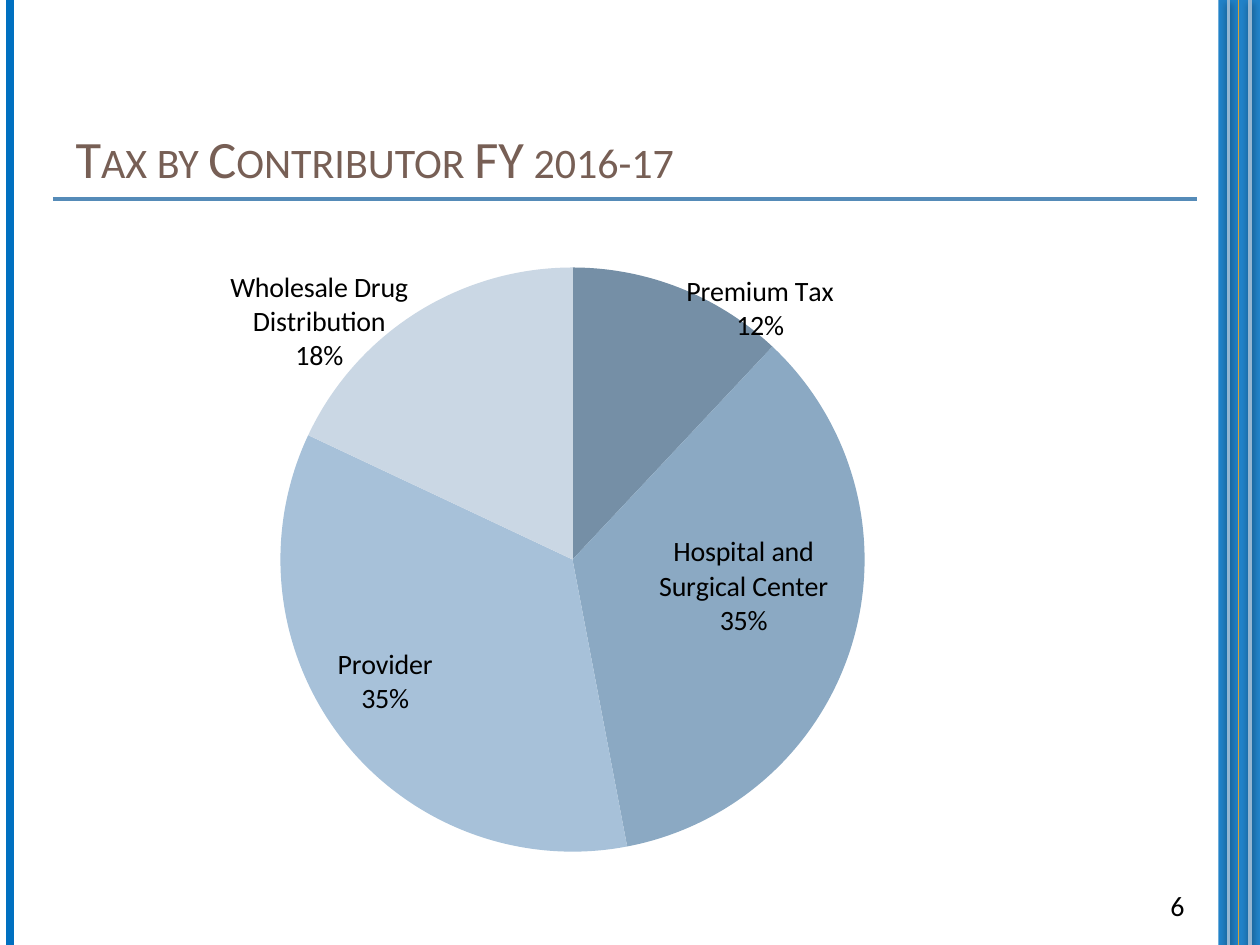
from pptx import Presentation
from pptx.chart.data import CategoryChartData
from pptx.dml.color import RGBColor
from pptx.enum.chart import XL_CHART_TYPE as ChartType, XL_LABEL_POSITION as LabelPosition
from pptx.enum.shapes import MSO_CONNECTOR as Connector, MSO_SHAPE as Shape
from pptx.enum.text import MSO_ANCHOR as Anchor, PP_ALIGN as Align
from pptx.oxml import parse_xml
from pptx.oxml.ns import nsdecls, qn
from pptx.util import Inches, Pt

# Content
TITLE = "Tax by Contributor FY 2016-17"
PAGE_NUMBER = "6"
FONT = "Calibri"
# contributor, share in percent, slice colour, label shift and label size
# (None for automatic) as fractions of the chart
CONTRIBUTORS = [
    ("Premium Tax", 12, "758FA6", (0.13, -0.17), None),
    ("Hospital and Surgical Center", 35, "8BA9C3", (0.03, -0.02), (0.26, 0.17)),
    ("Provider", 35, "A7C1D9", (-0.07, 0.05), None),
    ("Wholesale Drug Distribution", 18, "CAD7E4", (-0.17, -0.17), None),
]
PLOT_AREA = {"x": 0.21, "y": 0.07, "w": 0.57, "h": 0.87}
# x, colour, width in points, shadow
LEFT_STRIPE = (0.08, "0070C0", 4.5, False)
BAND_STRIPES = [
    (9.83, "D4A334", 1, False),
    (9.75, "94B6D2", 2, True),
    (9.92, "94B6D2", 2, True),
]
SHADOW = ('<a:outerShdw blurRad="50800" dist="25400" dir="5400000">'
          '<a:srgbClr val="000000"><a:alpha val="40000"/></a:srgbClr></a:outerShdw>')
LABEL_SIZE_XML = (
    '<c:extLst {ns}><c:ext uri="{{CE6537A1-D6FC-4f65-9D91-7224C49458BB}}" '
    'xmlns:c15="http://schemas.microsoft.com/office/drawing/2012/chart"><c15:layout>'
    '<c:manualLayout><c:w val="{w}"/><c:h val="{h}"/></c:manualLayout>'
    '</c15:layout></c:ext></c:extLst>')


def rgb(value):
    return RGBColor.from_string(value)


def style_font(font, size, color="000000"):
    for name, value in {"name": FONT, "size": Pt(size)}.items():
        setattr(font, name, value)
    font.color.rgb = rgb(color)


def add_line(start, end, color, width, shadow=False):
    line = slide.shapes.add_connector(
        Connector.STRAIGHT, *(Inches(v) for v in (*start, *end)))
    line.line.color.rgb = rgb(color)
    line.line.width = Pt(width)
    effects = SHADOW if shadow else ""
    line._element.spPr.append(
        parse_xml(f'<a:effectLst {nsdecls("a")}>{effects}</a:effectLst>'))


def add_stripe(x, color, width, shadow):
    add_line((x, 0), (x, 7.5), color, width, shadow)


def manual_layout(values, inner=False):
    target = '<c:layoutTarget val="inner"/>' if inner else ""
    modes = '<c:xMode val="edge"/><c:yMode val="edge"/>' if inner else ""
    parts = "".join(f'<c:{key} val="{value}"/>' for key, value in values.items())
    return parse_xml(f'<c:layout {nsdecls("c")}><c:manualLayout>{target}{modes}{parts}'
                     '</c:manualLayout></c:layout>')


prs = Presentation()
prs.slide_width, prs.slide_height = Inches(10), Inches(7.5)
slide = prs.slides.add_slide(prs.slide_layouts[5])

# Side stripes and right band
add_stripe(*LEFT_STRIPE)
band = slide.shapes.add_shape(Shape.RECTANGLE, Inches(9.67), 0, Inches(0.33), Inches(7.5))
band.shadow.inherit = False
band.fill.solid()
band.fill.fore_color.rgb = rgb("0070C0")
band.fill._xPr.find(".//" + qn("a:srgbClr")).append(
    parse_xml(f'<a:alpha {nsdecls("a")} val="87000"/>'))
band.line.fill.background()
for stripe in BAND_STRIPES:
    add_stripe(*stripe)

# Title and rule
add_line((0.42, 1.58), (9.5, 1.58), "558BB8", 2.25)
title = slide.shapes.title
title.left, title.top, title.width, title.height = map(Inches, (0.5, 0.3, 6.75, 1.25))
title.text_frame.text = TITLE
title.text_frame.vertical_anchor = Anchor.BOTTOM
heading = title.text_frame.paragraphs[0]
heading.alignment = Align.LEFT
heading_font = heading.runs[0].font
style_font(heading_font, 30, "775F55")
heading_font._element.set("cap", "small")

# Page number
page_box = slide.shapes.add_textbox(*map(Inches, (8.5, 7, 1, 0.5)))
page_box.text_frame.word_wrap = True
page = page_box.text_frame.paragraphs[0]
page.text = PAGE_NUMBER
page.alignment = Align.RIGHT
style_font(page.runs[0].font, 16)

# Pie chart
tax_data = CategoryChartData()
tax_data.categories = [name for name, *_ in CONTRIBUTORS]
tax_data.add_series("Series 1", [share for _, share, *_ in CONTRIBUTORS])
chart = slide.shapes.add_chart(
    ChartType.PIE, *map(Inches, (0.5, 1.75, 8.17, 5.33)), tax_data).chart
chart.has_legend = False
chart.has_title = False
style_font(chart.font, 18)
plot_area = chart._chartSpace.chart.plotArea
for old_layout in plot_area.findall(qn("c:layout")):
    plot_area.remove(old_layout)
plot_area.insert(0, manual_layout(PLOT_AREA, inner=True))

# Labels and slices
pie = chart.plots[0]
pie.vary_by_categories = True
series = pie.series[0]
labels = series.data_labels
for name, value in {"show_category_name": True, "show_percentage": True,
                    "show_value": False, "number_format": "0%",
                    "number_format_is_linked": False,
                    "position": LabelPosition.CENTER}.items():
    setattr(labels, name, value)
style_font(labels.font, 16)
for leader in labels._element.findall(qn("c:showLeaderLines")):
    leader.set("val", "0")

for index, (_, _, color, (dx, dy), size) in enumerate(CONTRIBUTORS):
    point = series.points[index]
    point.format.fill.solid()
    point.format.fill.fore_color.rgb = rgb(color)
    point.format.line.fill.background()
    style_font(point.data_label.font, 16)
    point.data_label.position = LabelPosition.CENTER
    label = labels._element.findall(qn("c:dLbl"))[index]
    label.insert(1, manual_layout({"x": dx, "y": dy}))
    for tag, shown in (("showVal", 0), ("showCatName", 1), ("showPercent", 1)):
        label.find(qn(f"c:{tag}")).set("val", str(shown))
    if size:
        label.append(parse_xml(
            LABEL_SIZE_XML.format(ns=nsdecls("c"), w=size[0], h=size[1])))

for group in (labels._element, *labels._element.findall(qn("c:dLbl"))):
    last_flag = [child for child in group if child.tag.endswith(("showPercent", "showBubbleSize"))][-1]
    last_flag.addnext(parse_xml(f'<c:separator {nsdecls("c")}>\n</c:separator>'))

prs.save("out.pptx")
